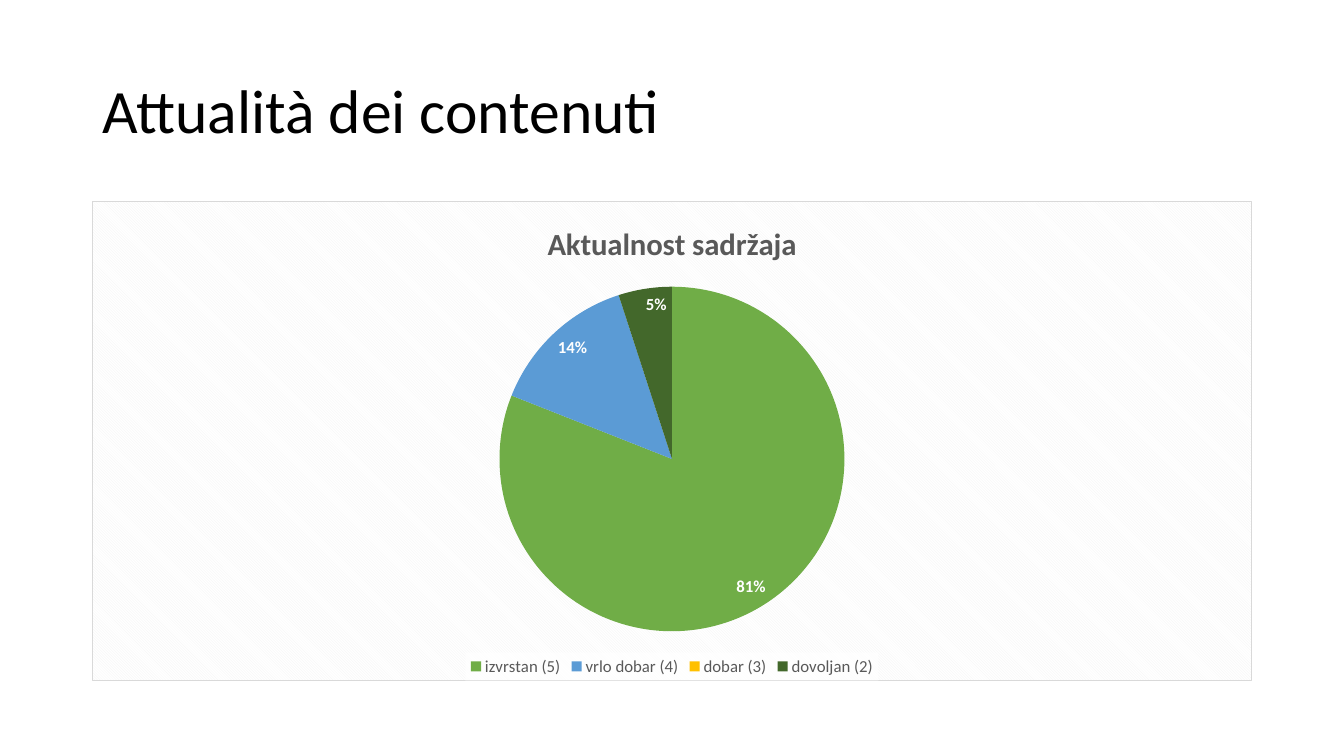
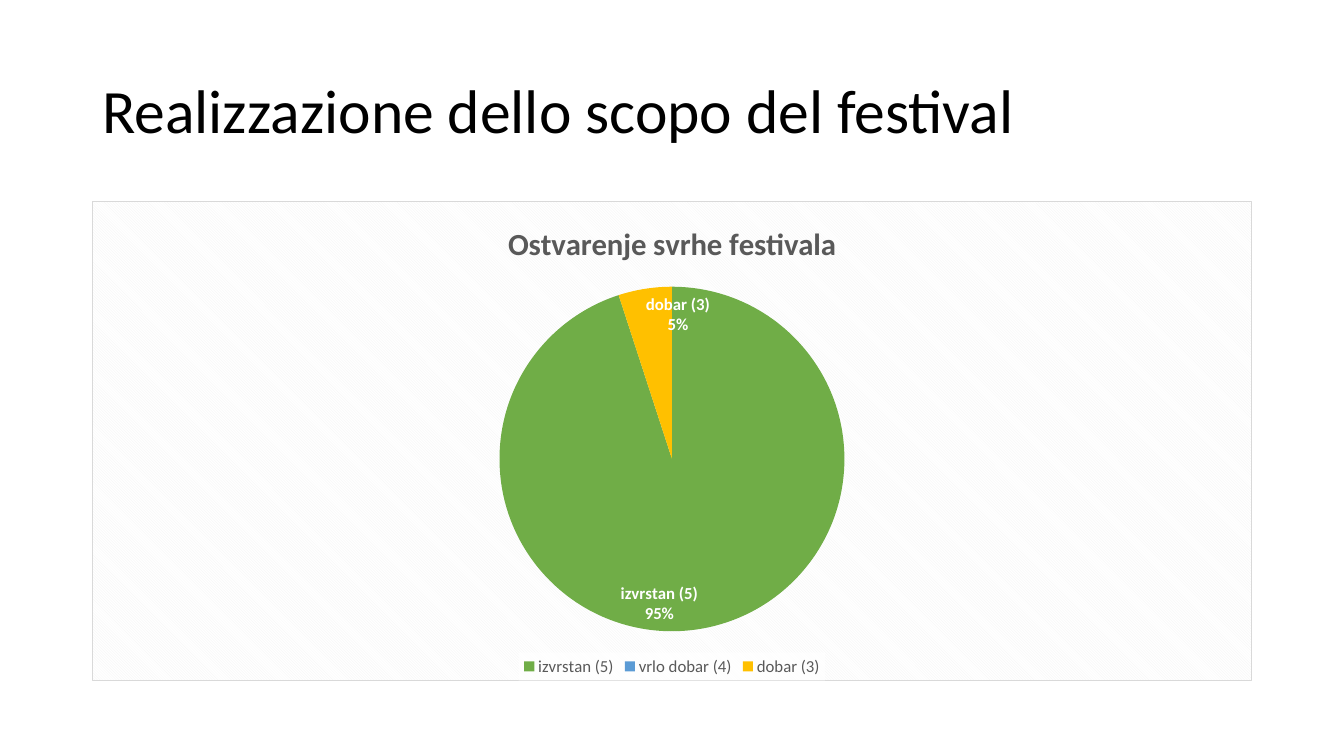
from dataclasses import dataclass

from pptx import Presentation
from pptx import util as u
from pptx.chart.data import CategoryChartData
from pptx.dml.color import RGBColor
from pptx.enum import chart as charts, text
from pptx.oxml import parse_xml
from pptx.oxml.ns import nsdecls


@dataclass(frozen=True)
class Theme:
    face: str = "Calibri"
    ink: str = "000000"
    muted: str = "595959"
    paper: str = "FFFFFF"
    hatch: str = "F2F2F2"
    border: str = "D9D9D9"
    grades: tuple = ("70AD47", "5B9BD5", "FFC000", "43682B")
    heading_size: int = 44
    chart_title_size: int = 22
    label_size: int = 12
    base_size: int = 10


GRADES = ("izvrstan (5)", "vrlo dobar (4)", "dobar (3)", "dovoljan (2)")
LEFT, WIDTH = u.Pt(66), u.Pt(828)


class Deck:
    def __init__(self, theme):
        self.theme = theme
        self.show = Presentation()
        self.show.slide_width, self.show.slide_height = u.Pt(960), u.Pt(540)
        self.slide = None

    def new_slide(self):
        self.slide = self.show.slides.add_slide(self.show.slide_layouts[6])

    def style(self, font, size, colour, bold=False):
        font.name, font.size, font.bold = self.theme.face, u.Pt(size), bold
        font.color.rgb = RGBColor.from_string(colour)

    def heading(self, wording):
        frame = self.slide.shapes.add_textbox(
            LEFT, u.Pt(28.75), WIDTH, u.Pt(104.4)).text_frame
        frame.word_wrap = True
        frame.vertical_anchor = text.MSO_ANCHOR.MIDDLE
        frame.text = wording
        line = frame.paragraphs[0]
        line.line_spacing = 0.9
        self.style(line.runs[0].font, self.theme.heading_size, self.theme.ink)

    def pie(self, title, shares, name_slices):
        theme = self.theme
        data = CategoryChartData()
        data.categories = GRADES[:len(shares)]
        data.add_series(title, shares)
        chart = self.slide.shapes.add_chart(
            charts.XL_CHART_TYPE.PIE, LEFT, u.Pt(143.75), WIDTH, u.Pt(342.6),
            data).chart
        self.style(chart.font, theme.base_size, theme.ink)

        chart.has_title = True
        chart.chart_title.include_in_layout = False
        caption = chart.chart_title.text_frame
        caption.text = title
        self.style(caption.paragraphs[0].runs[0].font,
                   theme.chart_title_size, theme.muted, True)

        chart.has_legend = True
        chart.legend.position = charts.XL_LEGEND_POSITION.BOTTOM
        chart.legend.include_in_layout = False
        self.style(chart.legend.font, theme.label_size, theme.muted)

        series = chart.plots[0].series[0]
        for index, colour in enumerate(theme.grades[:len(shares)]):
            fill = series.points[index].format.fill
            fill.solid()
            fill.fore_color.rgb = RGBColor.from_string(colour)

        labels = series.data_labels
        labels.show_value = False
        labels.show_percentage = True
        labels.show_category_name = name_slices
        labels.position = charts.XL_LABEL_POSITION.INSIDE_END
        self.style(labels.font, theme.label_size, theme.paper, True)
        self.hide_empty_labels(chart, shares)
        self.chart_background(chart)

    def hide_empty_labels(self, chart, shares):
        all_labels = chart.element.xpath(".//c:ser/c:dLbls")[0]
        empty = [index for index, share in enumerate(shares) if not share]
        for place, index in enumerate(empty):
            all_labels.insert(place, parse_xml(
                f'<c:dLbl {nsdecls("c")}><c:idx val="{index}"/>'
                '<c:delete val="1"/></c:dLbl>'))

    def chart_background(self, chart):
        """Hatch and outline the chart, and lay a pale panel under its legend."""
        theme = self.theme
        body = chart.element.xpath("c:chart")[0]
        for corners in chart.element.xpath("c:roundedCorners"):
            chart.element.remove(corners)
        body.addprevious(parse_xml(
            f'<c:roundedCorners {nsdecls("c")} val="0"/>'))
        body.addnext(parse_xml(
            f'<c:spPr {nsdecls("c", "a")}><a:pattFill prst="dkDnDiag">'
            f'<a:fgClr><a:srgbClr val="{theme.hatch}"/></a:fgClr>'
            f'<a:bgClr><a:srgbClr val="{theme.paper}"/></a:bgClr></a:pattFill>'
            f'<a:ln w="{u.Pt(0.75)}"><a:solidFill>'
            f'<a:srgbClr val="{theme.border}"/></a:solidFill></a:ln></c:spPr>'))
        body.xpath("c:legend/c:txPr")[0].addprevious(parse_xml(
            f'<c:spPr {nsdecls("c", "a")}><a:solidFill>'
            f'<a:srgbClr val="{theme.paper}"><a:alpha val="78000"/></a:srgbClr>'
            '</a:solidFill><a:ln><a:noFill/></a:ln></c:spPr>'))


def main():
    deck = Deck(Theme())
    for heading, title, shares, name_slices in (
        ("Attualità dei contenuti", "Aktualnost sadržaja",
         (81, 14, 0, 5), False),
        ("Realizzazione dello scopo del festival",
         "Ostvarenje svrhe festivala", (95, 0, 5), True),
    ):
        deck.new_slide()
        deck.heading(heading)
        deck.pie(title, shares, name_slices)
    deck.show.save("out.pptx")


if __name__ == "__main__":
    main()
